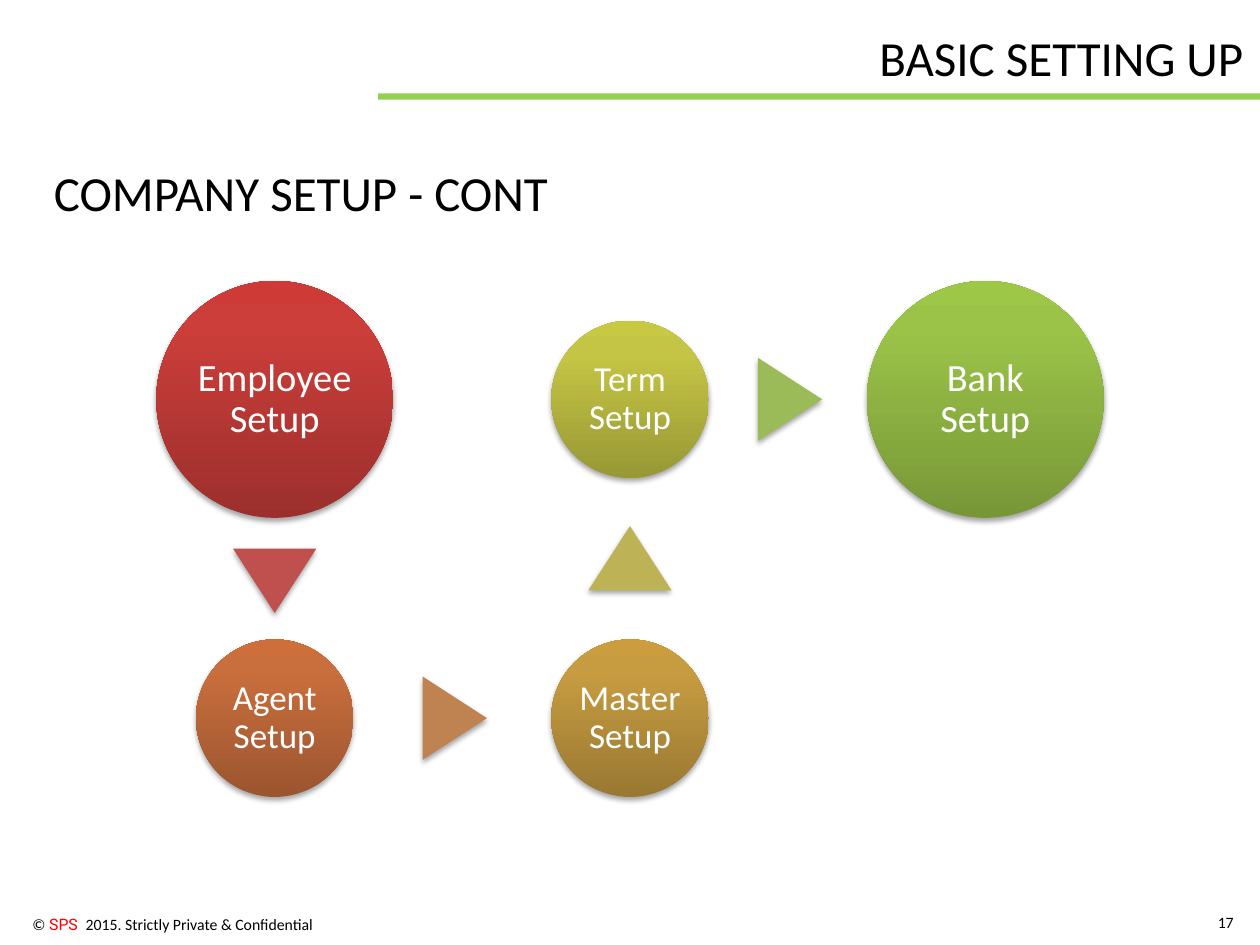
import copy

import pptx
import pptx.dml.color
import pptx.enum.shapes
import pptx.enum.text
import pptx.oxml
import pptx.oxml.ns
import pptx.util
from lxml import etree

Inches = pptx.util.Inches
Pt = pptx.util.Pt
RGBColor = pptx.dml.color.RGBColor
Shape = pptx.enum.shapes.MSO_SHAPE
Align = pptx.enum.text.PP_ALIGN
Anchor = pptx.enum.text.MSO_ANCHOR
qn = pptx.oxml.ns.qn

BLACK = RGBColor(0x00, 0x00, 0x00)
WHITE = RGBColor(0xFF, 0xFF, 0xFF)
RED = RGBColor(0xFF, 0x00, 0x00)
GREEN = RGBColor(0x92, 0xD0, 0x50)
EMPLOYEE = [RGBColor.from_string(c) for c in ("9C2F2D", "CB3E3A", "CE3B37")]
AGENT = [RGBColor.from_string(c) for c in ("9B552F", "C96E3D", "CD6E3B")]
MASTER = [RGBColor.from_string(c) for c in ("997832", "C79C41", "CB9D3F")]
TERM = [RGBColor.from_string(c) for c in ("989835", "C5C545", "C8C942")]
BANK = [RGBColor.from_string(c) for c in ("779737", "9BC348", "9DC746")]
ARROW_RED = RGBColor(0xC0, 0x50, 0x4D)
ARROW_ORANGE = RGBColor(0xBE, 0x83, 0x51)
ARROW_OLIVE = RGBColor(0xBD, 0xB2, 0x55)
ARROW_GREEN = RGBColor(0x9B, 0xBB, 0x59)

LEFT, MIDDLE, RIGHT = 2.18, 5, 7.82
UPPER, LOWER = 3.17, 5.7
LARGE, SMALL = 1.88, 1.25


class SlideBuilder:
    font = "Calibri"
    gradient_positions = (0, 0.8, 1)

    def __init__(self, slide):
        self.slide = slide

    def style_run(self, run, size, color=BLACK, font=None):
        run.font.name = font or self.font
        run.font.size = Pt(size)
        run.font.color.rgb = color

    def heading(self, shape, text, left, top, width):
        shape.left, shape.top = Inches(left), Inches(top)
        shape.width, shape.height = Inches(width), Inches(0.57)
        frame = shape.text_frame
        frame.text = text
        frame.word_wrap = False
        frame.auto_size = pptx.enum.text.MSO_AUTO_SIZE.SHAPE_TO_FIT_TEXT
        frame.vertical_anchor = Anchor.TOP
        frame.paragraphs[0].alignment = Align.LEFT
        self.style_run(frame.paragraphs[0].runs[0], 28)

    def title(self, text, left, top, width):
        self.heading(self.slide.shapes.title, text, left, top, width)

    def subtitle(self, text, left, top, width):
        box = self.slide.shapes.add_textbox(0, 0, 0, 0)
        self.heading(box, text, left, top, width)

    def footer(self, pieces, left, top, width, height, anchor):
        box = self.slide.shapes.add_textbox(
            Inches(left), Inches(top), Inches(width), Inches(height))
        frame = box.text_frame
        frame.word_wrap = True
        frame.vertical_anchor = anchor
        paragraph = frame.paragraphs[0]
        paragraph.alignment = Align.RIGHT
        for text, color, font in pieces:
            run = paragraph.add_run()
            run.text = text
            self.style_run(run, 9, color, font)

    def shape(self, kind, center_x, center_y, width, height):
        shape = self.slide.shapes.add_shape(
            kind, Inches(center_x - width / 2), Inches(center_y - height / 2),
            Inches(width), Inches(height))
        shape.line.fill.background()
        shape.shadow.inherit = False
        return shape

    def rule(self, left, top, width, height, color):
        rule = self.shape(Shape.RECTANGLE, left + width / 2, top + height / 2, width, height)
        rule.fill.solid()
        rule.fill.fore_color.rgb = color

    def cast_shadow(self, shape):
        effects = shape._element.spPr.find(qn("a:effectLst"))
        shadow = etree.SubElement(
            effects, qn("a:outerShdw"), blurRad=str(Pt(3.1)), dist=str(Pt(1.8)),
            dir="5400000", rotWithShape="0")
        color = etree.SubElement(shadow, qn("a:srgbClr"), val="000000")
        etree.SubElement(color, qn("a:alpha"), val="35000")

    def circle(self, text, center_x, center_y, diameter, size, colors):
        circle = self.shape(Shape.OVAL, center_x, center_y, diameter, diameter)
        circle.fill.gradient()
        circle.fill.gradient_angle = 90
        stop_list = circle._element.spPr.find(".//" + qn("a:gsLst"))
        stop_list.append(copy.deepcopy(stop_list[0]))
        stops = circle.fill.gradient_stops
        for stop, position, color in zip(stops, self.gradient_positions, colors):
            stop.position = position
            stop.color.rgb = color
        self.cast_shadow(circle)
        frame = circle.text_frame
        frame.text = text
        frame.word_wrap = True
        frame.vertical_anchor = Anchor.MIDDLE
        frame.margin_left = frame.margin_right = Inches(0.03)
        frame.margin_top = frame.margin_bottom = Inches(0.03)
        paragraph = frame.paragraphs[0]
        paragraph.alignment = Align.CENTER
        paragraph.line_spacing = 0.9
        self.style_run(paragraph.runs[0], size, WHITE)

    def arrow(self, center_x, center_y, rotation, color):
        arrow = self.shape(Shape.ISOSCELES_TRIANGLE, center_x, center_y, 0.66, 0.51)
        arrow.rotation = rotation
        arrow.fill.solid()
        arrow.fill.fore_color.rgb = color
        self.cast_shadow(arrow)


def main():
    presentation = pptx.Presentation()
    presentation.slide_width = Inches(10)
    presentation.slide_height = Inches(7.5)
    builder = SlideBuilder(presentation.slides.add_slide(presentation.slide_layouts[5]))

    builder.rule(3, 0.74, 7, 0.05, GREEN)
    builder.footer(
        [("© ", BLACK, None), ("SPS  ", RED, "Roboto"),
         ("2015. Strictly Private & Confidential", BLACK, None)],
        -0.33, 7.21, 2.91, 0.25, Anchor.TOP)
    builder.footer([("17", BLACK, None)], 9.49, 7.12, 0.4, 0.4, Anchor.MIDDLE)
    builder.title("BASIC SETTING UP", 6.88, 0.17, 3.12)
    builder.subtitle("COMPANY SETUP - CONT", 0.33, 1.24, 4.17)

    builder.circle("Employee Setup", LEFT, UPPER, LARGE, 22, EMPLOYEE)
    builder.arrow(LEFT, 4.61, 180, ARROW_RED)
    builder.circle("Agent Setup", LEFT, LOWER, SMALL, 20, AGENT)
    builder.arrow(3.61, LOWER, 90, ARROW_ORANGE)
    builder.circle("Master Setup", MIDDLE, LOWER, SMALL, 20, MASTER)
    builder.arrow(MIDDLE, 4.43, 0, ARROW_OLIVE)
    builder.circle("Term Setup", MIDDLE, UPPER, SMALL, 20, TERM)
    builder.arrow(6.27, UPPER, 90, ARROW_GREEN)
    builder.circle("Bank Setup", RIGHT, UPPER, LARGE, 22, BANK)

    presentation.save("out.pptx")


if __name__ == "__main__":
    main()
